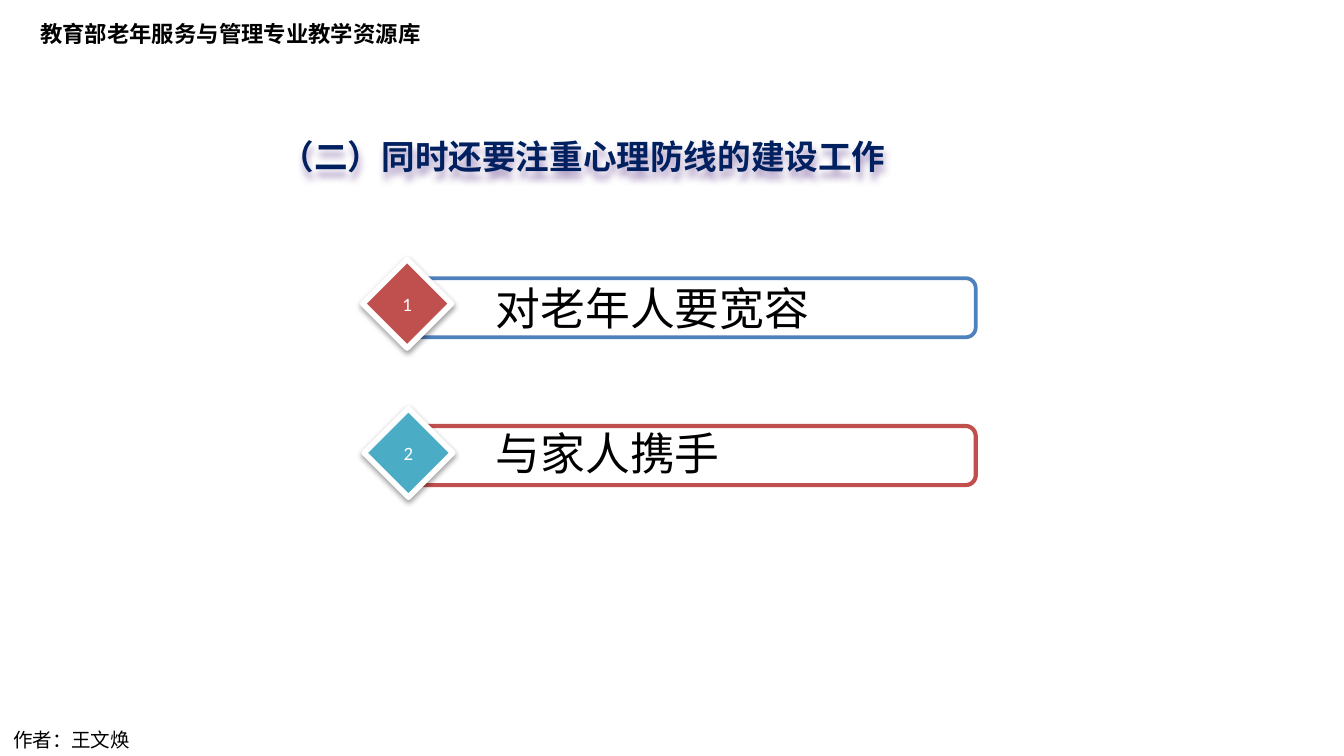
import pptx
import pptx.util
import pptx.dml.color
import pptx.enum.shapes
import pptx.enum.text
import pptx.oxml
import pptx.oxml.ns
import lxml.etree

Inches, Pt = pptx.util.Inches, pptx.util.Pt
RGBColor = pptx.dml.color.RGBColor
Shape = pptx.enum.shapes.MSO_SHAPE
Anchor = pptx.enum.text.MSO_ANCHOR
Align = pptx.enum.text.PP_ALIGN
Fit = pptx.enum.text.MSO_AUTO_SIZE
qn = pptx.oxml.ns.qn

BLACK = RGBColor(0x00, 0x00, 0x00)
WHITE = RGBColor(0xFF, 0xFF, 0xFF)
NAVY = RGBColor(0x00, 0x20, 0x60)
BLUE = RGBColor(0x4F, 0x81, 0xBD)
RED = RGBColor(0xC0, 0x50, 0x4D)
TEAL = RGBColor(0x4B, 0xAC, 0xC6)
PURPLE = RGBColor(0x80, 0x64, 0xA2)
CJK = "Noto Sans CJK SC"
LATIN = "Calibri"

HEADER = "教育部老年服务与管理专业教学资源库"
AUTHOR = "作者：王文焕"
TITLE = "（二）同时还要注重心理防线的建设工作"
# label, label top, label width, bar top, bar line, line width, diamond left, diamond top, diamond fill
ITEMS = [
    ("对老年人要宽容", 2.04, 2.56, 2.07, BLUE, 2, 2.7, 1.93, RED),
    ("与家人携手", 3.12, 1.88, 3.17, RED, 2.25, 2.71, 3.04, TEAL),
]
SIDE = 0.66


def write(shape, text, size, color, font=LATIN, bold=False):
    run = shape.text_frame.paragraphs[0].add_run()
    run.text = text
    run.font.size = Pt(size)
    run.font.bold = bold
    run.font.color.rgb = color
    run.font.name = font
    east = lxml.etree.SubElement(run.font._element, qn("a:ea"))
    east.set("typeface", CJK)


def label(slide, box, text, size, color, font=LATIN, bold=False, wrap=False):
    shape = slide.shapes.add_textbox(*map(Inches, box))
    shape.text_frame.word_wrap = wrap
    shape.text_frame.auto_size = Fit.SHAPE_TO_FIT_TEXT
    write(shape, text, size, color, font, bold)
    return shape


def block(slide, kind, box, fill, line, width):
    shape = slide.shapes.add_shape(kind, *map(Inches, box))
    shape.fill.solid()
    shape.fill.fore_color.rgb = fill
    shape.line.color.rgb = line
    shape.line.width = Pt(width)
    shape.shadow.inherit = False
    return shape


def shade(shape, color, alpha, blur, dist):
    """Give the shape a soft shadow that falls straight down."""
    shape.shadow.inherit = False
    effects = shape.element.spPr.find(qn("a:effectLst"))
    outer = lxml.etree.SubElement(
        effects, qn("a:outerShdw"), blurRad=str(Pt(blur)), dist=str(Pt(dist)),
        dir="5400000", rotWithShape="0")
    tint = lxml.etree.SubElement(outer, qn("a:srgbClr"), val=str(color))
    lxml.etree.SubElement(tint, qn("a:alpha"), val=str(alpha * 1000))


def main():
    deck = pptx.Presentation()
    deck.slide_width = Inches(10)
    deck.slide_height = deck.slide_width * 9 // 16
    slide = deck.slides.add_slide(deck.slide_layouts[6])

    label(slide, (0.2, 0.1, 3.06, 0.3), HEADER, 12, BLACK, CJK, bold=True)
    label(slide, (0, 5.37, 5.36, 0.28), AUTHOR, 10.5, BLACK, CJK, wrap=True)
    title = label(slide, (1.99, 0.96, 4.78, 0.4), TITLE, 18, NAVY, bold=True)
    shade(title, PURPLE, 65, 4, 4)

    for number, item in enumerate(ITEMS, 1):
        text, top, wide, bar_top, edge, width, left, high, fill = item
        bar = block(slide, Shape.ROUNDED_RECTANGLE,
                    (3.07, bar_top, 4.19, 0.44), WHITE, edge, width)
        bar.adjustments[0] = 0.17
        badge = block(slide, Shape.DIAMOND, (left, high, SIDE, SIDE), fill, WHITE, 3)
        shade(badge, BLACK, 38, 3.1, 1.6)
        frame = badge.text_frame
        frame.word_wrap = False
        frame.vertical_anchor = Anchor.MIDDLE
        frame.paragraphs[0].alignment = Align.CENTER
        write(badge, str(number), 10.1, WHITE)
        label(slide, (3.59, top, wide, 0.5), text, 24, BLACK)

    deck.save("out.pptx")


if __name__ == "__main__":
    main()
